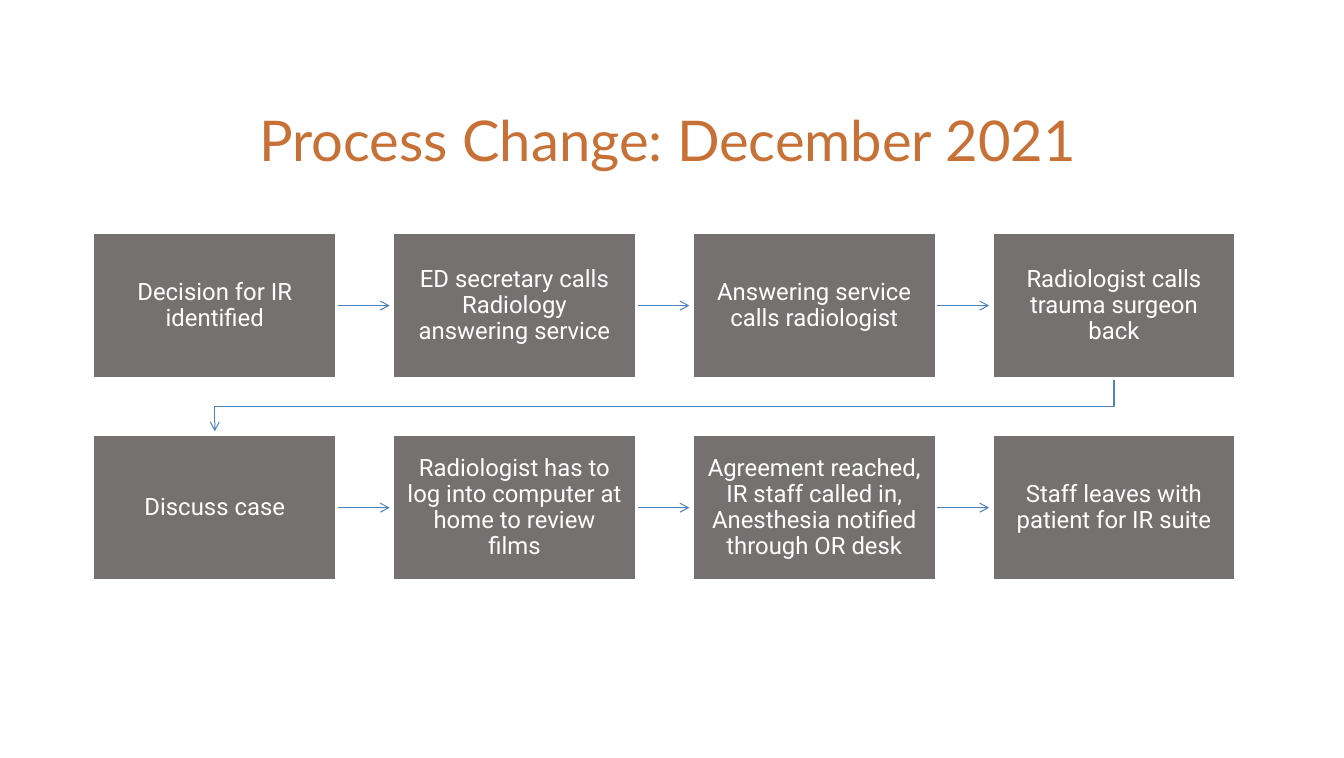
from lxml.etree import SubElement
from pptx import Presentation
from pptx.dml.color import RGBColor
from pptx.enum.shapes import MSO_CONNECTOR as Connector, MSO_SHAPE as Shape
from pptx.enum.text import MSO_ANCHOR as Anchor, MSO_AUTO_SIZE as AutoSize, PP_ALIGN as Align
from pptx.oxml.ns import qn
from pptx.util import Cm, Pt

STEPS = [
    "Decision for IR identified",
    "ED secretary calls Radiology answering service",
    "Answering service calls radiologist",
    "Radiologist calls trauma surgeon back",
    "Discuss case",
    "Radiologist has to log into computer at home to review films",
    "Agreement reached, IR staff called in, Anesthesia notified through OR desk",
    "Staff leaves with patient for IR suite",
]
COLUMNS = 4
ROWS = 2
STEP_WIDTH, STEP_HEIGHT = 6.12, 3.68
ARROW_GAP = 0.08


def paint(target, color):
    target.rgb = RGBColor.from_string(color)


def style_text(frame, font_name, size, color, margins):
    frame.word_wrap = True
    frame.auto_size = AutoSize.NONE
    frame.vertical_anchor = Anchor.MIDDLE
    frame.margin_left = frame.margin_right = Cm(margins[0])
    frame.margin_top = frame.margin_bottom = Cm(margins[1])
    paragraph = frame.paragraphs[0]
    paragraph.alignment = Align.CENTER
    for run in paragraph.runs:
        run.font.name = font_name
        run.font.size = Pt(size)
        paint(run.font.color, color)


def add_heading(slide, text, left, top, width, height):
    heading = slide.shapes.title
    heading.left, heading.top = Cm(left), Cm(top)
    heading.width, heading.height = Cm(width), Cm(height)
    heading.text_frame.text = text
    style_text(heading.text_frame, "Lato", 40, "C87137", (0.25, 0.13))


def add_step(slide, text, left, top):
    step = slide.shapes.add_shape(
        Shape.RECTANGLE, Cm(left), Cm(top), Cm(STEP_WIDTH), Cm(STEP_HEIGHT))
    step.shadow.inherit = False
    step.fill.solid()
    paint(step.fill.fore_color, "767171")
    paint(step.line.color, "FFFFFF")
    step.line.width = Pt(2)
    step.text_frame.text = text
    step.text_frame.paragraphs[0].line_spacing = 0.9
    style_text(step.text_frame, "Roboto", 17, "FFFFFF", (0.3, 0.3))


def style_arrow(arrow):
    paint(arrow.line.color, "4F81BD")
    arrow.line.width = Pt(0.75)
    outline = arrow.line._get_or_add_ln()
    SubElement(outline, qn("a:tailEnd"), type="arrow")


def add_next_arrow(slide, start, end, y):
    arrow = slide.shapes.add_connector(
        Connector.STRAIGHT, Cm(start), Cm(y), Cm(end), Cm(y))
    style_arrow(arrow)
    SubElement(arrow._element.spPr, qn("a:effectLst"))


def add_return_arrow(slide, start_x, end_x, top, bottom):
    middle = (top + bottom) / 2
    builder = slide.shapes.build_freeform(Cm(start_x), Cm(top))
    bends = [(start_x, middle), (end_x, middle), (end_x, bottom - ARROW_GAP)]
    builder.add_line_segments([(Cm(x), Cm(y)) for x, y in bends], close=False)
    arrow = builder.convert_to_shape()
    arrow.fill.background()
    style_arrow(arrow)
    arrow.shadow.inherit = False


def add_process(slide, left, top, width, height):
    column_pitch = (width - STEP_WIDTH) / (COLUMNS - 1)
    row_pitch = (height - STEP_HEIGHT) / (ROWS - 1)
    for index, text in enumerate(STEPS):
        row, column = divmod(index, COLUMNS)
        x = left + column * column_pitch
        y = top + row * row_pitch
        if column < COLUMNS - 1:
            add_next_arrow(slide, x + STEP_WIDTH, x + column_pitch - ARROW_GAP,
                           y + STEP_HEIGHT / 2)
        elif row < ROWS - 1:
            add_return_arrow(slide, x + STEP_WIDTH / 2, left + STEP_WIDTH / 2,
                             y + STEP_HEIGHT, y + row_pitch)
        add_step(slide, text, x, y)


def main():
    deck = Presentation()
    deck.slide_width, deck.slide_height = Cm(33.78), Cm(19.05)
    slide = deck.slides.add_slide(deck.slide_layouts[5])
    add_heading(slide, "Process Change: December 2021", 2.39, 2.51, 28.78, 1.96)
    add_process(slide, 2.34, 5.84, 28.72, 8.76)
    deck.save("out.pptx")


if __name__ == "__main__":
    main()
